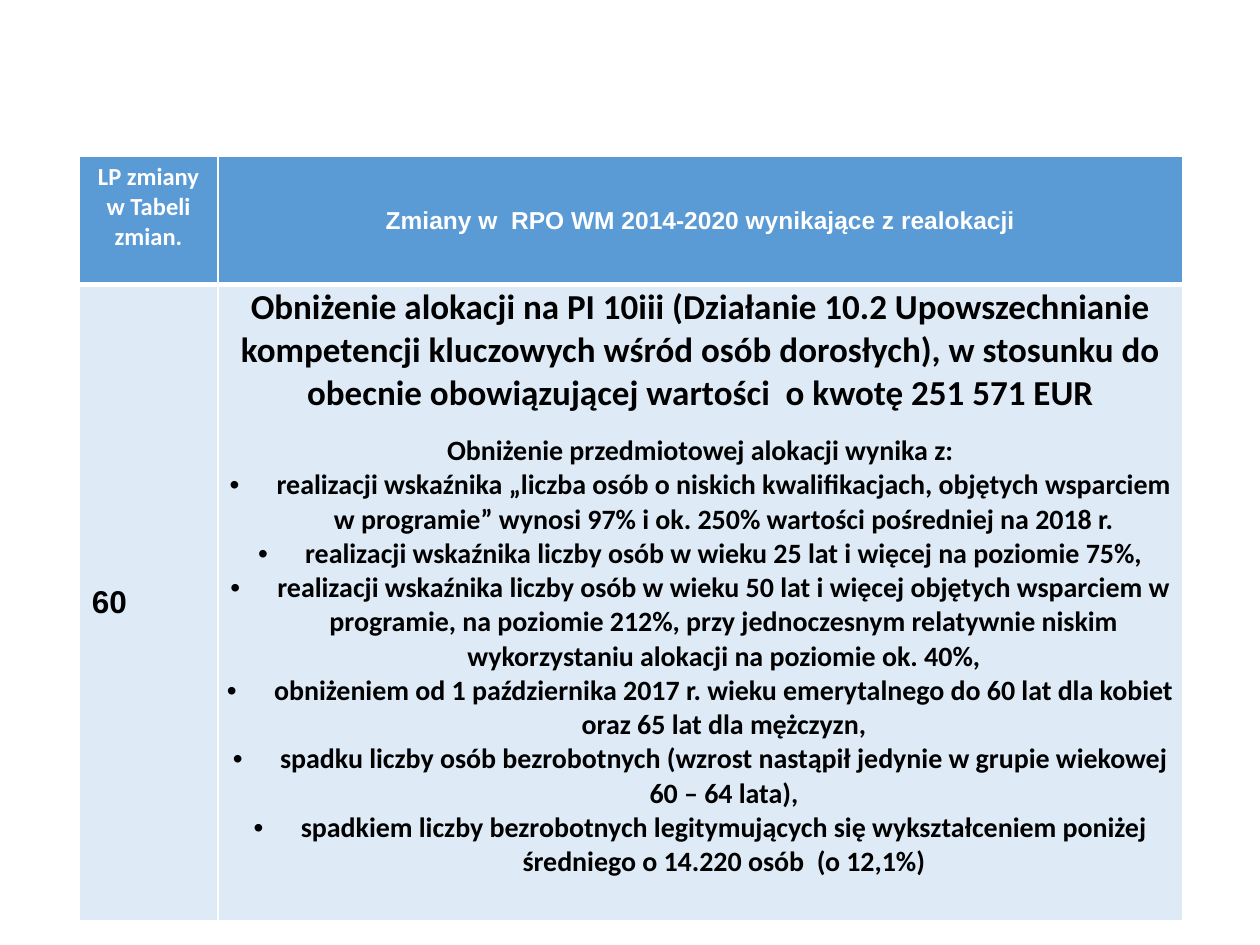
from lxml.etree import SubElement
from pptx import Presentation
from pptx.dml.color import RGBColor
from pptx.enum.text import MSO_ANCHOR as Anchor, PP_ALIGN as Align
from pptx.oxml.ns import qn
from pptx.util import Cm, Pt

COLORS = {"header": "5B9BD5", "body": "DEEBF7", "white": "FFFFFF", "black": "000000"}
COL_WIDTHS = (2.79, 19.46)
ROW_HEIGHTS = (2.59, 12.83)
BULLET_INDENT = Cm(0.95)

HEADERS = ("LP zmiany w Tabeli zmian.",
           "Zmiany w  RPO WM 2014-2020 wynikające z realokacji")
CHANGE_NO = "60"
SUMMARY = ("Obniżenie alokacji na PI 10iii (Działanie 10.2 Upowszechnianie "
           "kompetencji kluczowych wśród osób dorosłych), w stosunku do obecnie "
           "obowiązującej wartości  o kwotę 251 571 EUR")
REASONS_LEAD = "Obniżenie przedmiotowej alokacji wynika z:"
REASONS = (
    "realizacji wskaźnika „liczba osób o niskich kwalifikacjach, objętych wsparciem "
    "w programie” wynosi 97% i ok. 250% wartości pośredniej na 2018 r.",
    "realizacji wskaźnika liczby osób w wieku 25 lat i więcej na poziomie 75%,",
    "realizacji wskaźnika liczby osób w wieku 50 lat i więcej objętych wsparciem w "
    "programie, na poziomie 212%, przy jednoczesnym relatywnie niskim wykorzystaniu "
    "alokacji na poziomie ok. 40%,",
    "obniżeniem od 1 października 2017 r. wieku emerytalnego do 60 lat dla kobiet "
    "oraz 65 lat dla mężczyzn,",
    "spadku liczby osób bezrobotnych (wzrost nastąpił jedynie w grupie wiekowej "
    "60 – 64 lata),",
    "spadkiem liczby bezrobotnych legitymujących się wykształceniem poniżej "
    "średniego o 14.220 osób  (o 12,1%)",
)


def rgb(name):
    return RGBColor.from_string(COLORS[name])


def set_borders(cell, bottom=1):
    """Draw white cell borders; only the bottom width varies."""
    tc_pr = cell._tc.get_or_add_tcPr()
    widths = {"a:lnL": 1, "a:lnR": 1, "a:lnT": 1, "a:lnB": bottom}
    for i, (tag, width) in enumerate(widths.items()):
        ln = tc_pr.makeelement(qn(tag), {"w": str(Pt(width))})
        fill = SubElement(ln, qn("a:solidFill"))
        SubElement(fill, qn("a:srgbClr"), val=COLORS["white"])
        tc_pr.insert(i, ln)


def style_cell(cell, fill, anchor=Anchor.MIDDLE, bottom=1):
    cell.fill.solid()
    cell.fill.fore_color.rgb = rgb(fill)
    cell.vertical_anchor = anchor
    set_borders(cell, bottom)


def write(p, text, size, font="Calibri", color="black", align=Align.CENTER):
    p.alignment = align
    r = p.add_run()
    r.text = text
    r.font.name, r.font.size, r.font.bold = font, Pt(size), True
    r.font.color.rgb = rgb(color)


def add_bullet(p):
    p_pr = p._p.get_or_add_pPr()
    p_pr.set("marL", str(BULLET_INDENT))
    p_pr.set("indent", str(-BULLET_INDENT))
    SubElement(p_pr, qn("a:buFont"), typeface="Arial")
    SubElement(p_pr, qn("a:buChar"), char="•")


def fill_header(cells):
    looks = (("Calibri", Anchor.TOP), ("Arial", Anchor.MIDDLE))
    for cell, text, (font, anchor) in zip(cells, HEADERS, looks):
        style_cell(cell, "header", anchor, bottom=3)
        write(cell.text_frame.paragraphs[0], text, 14, font, "white")


def fill_number(cell):
    style_cell(cell, "body")
    write(cell.text_frame.paragraphs[0], CHANGE_NO, 18, "Arial", align=Align.LEFT)


def fill_reasons(cell):
    style_cell(cell, "body", Anchor.TOP)
    cell.margin_left = cell.margin_right = cell.margin_top = Cm(0.03)
    cell.margin_bottom = Cm(0.3)
    tf = cell.text_frame
    p = tf.paragraphs[0]
    write(p, SUMMARY, 20)
    p.space_after = Pt(11)
    write(tf.add_paragraph(), REASONS_LEAD, 16)
    for reason in REASONS:
        p = tf.add_paragraph()
        add_bullet(p)
        write(p, reason, 16)


def add_changes_table(slide, left, top):
    frame = slide.shapes.add_table(2, 2, Cm(left), Cm(top),
                                   Cm(sum(COL_WIDTHS)), Cm(sum(ROW_HEIGHTS)))
    table = frame.table
    for col, width in zip(table.columns, COL_WIDTHS):
        col.width = Cm(width)
    for row, height in zip(table.rows, ROW_HEIGHTS):
        row.height = Cm(height)
    fill_header(table.rows[0].cells)
    fill_number(table.cell(1, 0))
    fill_reasons(table.cell(1, 1))


def main():
    prs = Presentation()
    prs.slide_width, prs.slide_height = Cm(25.4), Cm(19.05)
    slide = prs.slides.add_slide(prs.slide_layouts[6])
    add_changes_table(slide, 1.6, 3.15)
    prs.save("out.pptx")


if __name__ == "__main__":
    main()
